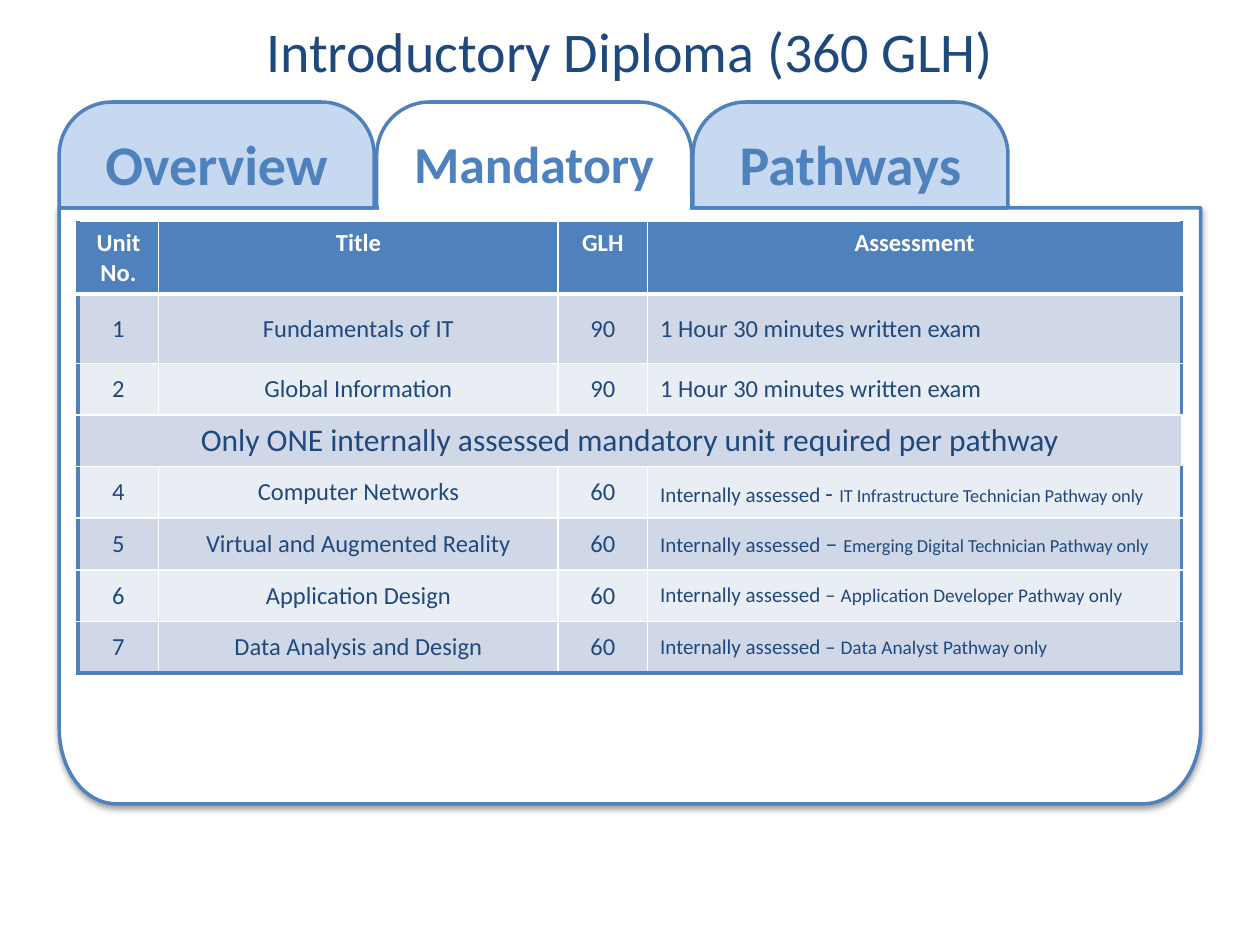
from math import cos, pi, sin

from lxml.etree import SubElement
from pptx import Presentation
from pptx.dml.color import RGBColor
from pptx.enum.shapes import MSO_SHAPE
from pptx.enum.text import MSO_ANCHOR, PP_ALIGN
from pptx.oxml.ns import qn
from pptx.util import Inches, Pt

NAVY, BLUE, PALE, WHITE = "1F497D", "4F81BD", "C6D9F1", "FFFFFF"
BANDS = ("D0D8E8", "E9EDF4")

TABS = [
    # label, left, fill, size
    ("Pathways", 5.5, PALE, 32),
    ("Mandatory", 2.99, WHITE, 29.6),
    ("Overview", 0.47, PALE, 32),
]

COL_WIDTHS = (0.64, 3.17, 0.71, 4.24)
ROW_HEIGHTS = (0.37, 0.55) + (0.41,) * 6
EXAM = [("1 Hour 30 minutes written exam", 14)]
INTERNAL = "Internally assessed "
NOTICE = "Only ONE internally assessed mandatory unit required per pathway"
UNITS = [
    ("1", "Fundamentals of IT", "90", EXAM),
    ("2", "Global Information", "90", EXAM),
    (NOTICE,),
    ("4", "Computer Networks", "60",
     [(INTERNAL, 12), ("-", 14), (" ", 16),
      ("IT Infrastructure Technician Pathway only", 10.5)]),
    ("5", "Virtual and Augmented Reality", "60",
     [(INTERNAL, 12), ("– ", 14),
      ("Emerging Digital Technician Pathway only", 10.5)]),
    ("6", "Application Design", "60",
     [(INTERNAL + "– ", 12), ("Application Developer Pathway only", 11)]),
    ("7", "Data Analysis and Design", "60",
     [(INTERNAL + "– ", 12), ("Data Analyst Pathway only", 11)]),
]


def rgb(color):
    return RGBColor.from_string(color)


def write(tf, runs, color, bold=False, align=PP_ALIGN.CENTER):
    """Fill the first paragraph with (text, size) runs."""
    p = tf.paragraphs[0]
    p.alignment = align
    for text, size in runs:
        r = p.add_run()
        r.text = text
        font = {"name": "Calibri", "size": Pt(size), "bold": bold}
        for name, value in font.items():
            setattr(r.font, name, value)
        r.font.color.rgb = rgb(color)


def paint(sp, fill, line):
    sp.shadow.inherit = False
    sp.fill.solid()
    sp.fill.fore_color.rgb = rgb(fill)
    sp.line.color.rgb = rgb(line)
    sp.line.width = Pt(2)


def add_title(s, text):
    title = s.shapes.title
    box = {"left": 0, "top": 0, "width": 10, "height": 0.79}
    for name, value in box.items():
        setattr(title, name, Inches(value))
    title.text_frame.vertical_anchor = MSO_ANCHOR.MIDDLE
    write(title.text_frame, [(text, 32)], NAVY)


def add_shadow(sp):
    effects = sp._element.spPr.find(qn("a:effectLst"))
    shadow = SubElement(effects, qn("a:outerShdw"), blurRad=str(Pt(3.1)),
                        dist=str(Pt(1.6)), dir="5400000", rotWithShape="0")
    color = SubElement(shadow, qn("a:srgbClr"), val="000000")
    SubElement(color, qn("a:alpha"), val="38000")


def add_panel(s):
    """Folder body: square top corners, elliptical bottom corners."""
    left, top, right, bottom = 0.47, 1.65, 9.53, 6.38
    rx, ry, steps = 0.45, 0.6, 16
    points = [(right, top)]
    for cx, start in ((right - rx, 0), (left + rx, pi / 2)):
        for i in range(steps + 1):
            angle = start + pi / 2 * i / steps
            points.append((cx + rx * cos(angle), bottom - ry + ry * sin(angle)))
    builder = s.shapes.build_freeform(Inches(left), Inches(top))
    builder.add_line_segments([(Inches(x), Inches(y)) for x, y in points])
    panel = builder.convert_to_shape()
    paint(panel, WHITE, BLUE)
    add_shadow(panel)


def add_tab(s, label, left, fill, size):
    tab = s.shapes.add_shape(MSO_SHAPE.ROUND_2_SAME_RECTANGLE, Inches(left),
                             Inches(0.81), Inches(2.5), Inches(0.84))
    tab.adjustments[0] = 0.5
    paint(tab, fill, BLUE)
    tab.text_frame.vertical_anchor = MSO_ANCHOR.MIDDLE
    write(tab.text_frame, [(label, size)], BLUE, bold=True)


def add_tab_opening(s):
    """Hides the panel edge under the open tab."""
    opening = s.shapes.add_shape(MSO_SHAPE.RECTANGLE, Inches(3.02), Inches(1.56),
                                 Inches(2.44), Inches(0.17))
    paint(opening, WHITE, WHITE)


def set_borders(cell, row, col):
    last_row, last_col = len(ROW_HEIGHTS) - 1, len(COL_WIDTHS) - 1
    inner, outer, rule = (WHITE, 1), (BLUE, 2.25), (WHITE, 3)
    borders = {
        "L": outer if col == 0 else inner,
        "R": outer if col == last_col else inner,
        "T": rule if row == 1 else inner,
        "B": rule if row == 0 else outer if row == last_row else inner,
    }
    tc_pr = cell._tc.get_or_add_tcPr()
    for side, (color, width) in borders.items():
        ln = SubElement(tc_pr, qn(f"a:ln{side}"), w=str(Pt(width)))
        fill = SubElement(ln, qn("a:solidFill"))
        SubElement(fill, qn("a:srgbClr"), val=color)


def add_unit_table(s):
    table = s.shapes.add_table(
        len(ROW_HEIGHTS), len(COL_WIDTHS), Inches(0.62), Inches(1.76),
        Inches(sum(COL_WIDTHS)), Inches(sum(ROW_HEIGHTS))).table
    for column, width in zip(table.columns, COL_WIDTHS):
        column.width = Inches(width)
    for row, height in zip(table.rows, ROW_HEIGHTS):
        row.height = Inches(height)

    for i in range(len(ROW_HEIGHTS)):
        for j in range(len(COL_WIDTHS)):
            cell = table.cell(i, j)
            set_borders(cell, i, j)
            cell.fill.solid()
            cell.fill.fore_color.rgb = rgb(BANDS[(i - 1) % 2] if i else BLUE)
            cell.vertical_anchor = MSO_ANCHOR.MIDDLE if i else MSO_ANCHOR.TOP

    for j, heading in enumerate(("Unit No.", "Title", "GLH", "Assessment")):
        write(table.cell(0, j).text_frame, [(heading, 14)], WHITE, bold=True)
    for i, unit in enumerate(UNITS, 1):
        if len(unit) == 1:
            table.cell(i, 0).merge(table.cell(i, len(COL_WIDTHS) - 1))
            write(table.cell(i, 0).text_frame, [(unit[0], 18)], NAVY)
            continue
        *facts, assessment = unit
        for j, text in enumerate(facts):
            write(table.cell(i, j).text_frame, [(text, 14)], NAVY)
        write(table.cell(i, len(facts)).text_frame, assessment, NAVY,
              align=PP_ALIGN.LEFT)


def main():
    prs = Presentation()
    prs.slide_width, prs.slide_height = Inches(10), Inches(7.5)
    s = prs.slides.add_slide(prs.slide_layouts[5])
    add_title(s, "Introductory Diploma (360 GLH)")
    add_panel(s)
    for tab in TABS:
        add_tab(s, *tab)
    add_tab_opening(s)
    add_unit_table(s)
    prs.save("out.pptx")


if __name__ == "__main__":
    main()
